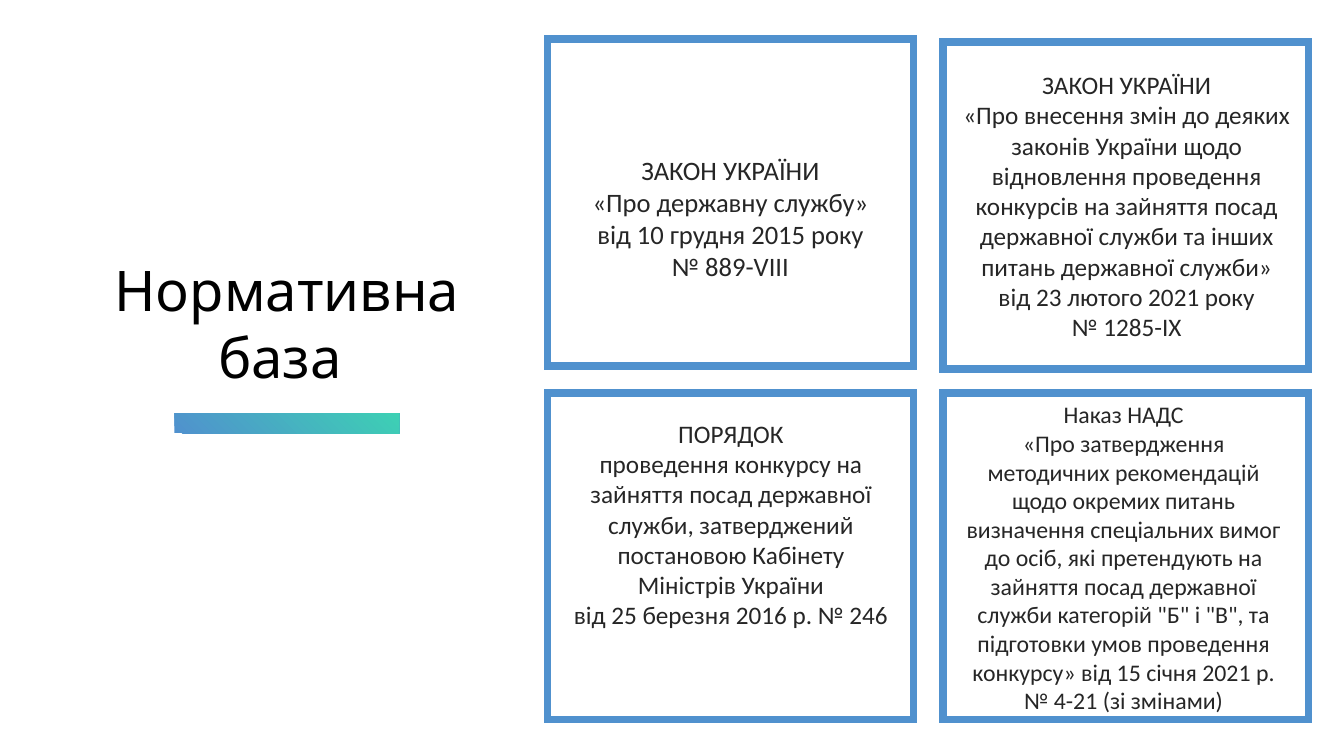
from lxml import etree
from pptx import Presentation
from pptx.dml.color import RGBColor
from pptx.enum.shapes import MSO_SHAPE as SHAPE
from pptx.enum.text import MSO_ANCHOR as ANCHOR, MSO_AUTO_SIZE as AUTOSIZE, PP_ALIGN as ALIGN
from pptx.oxml import parse_xml
from pptx.util import Inches, Pt

NS = "http://schemas.openxmlformats.org/drawingml/2006/main"
BLUE, GREEN, DARK = "5091CE", "3DD0B4", "262626"


def rgb(value):
    return RGBColor.from_string(value)


def write(tf, paragraphs, size, font, color):
    tf.word_wrap = True
    tf.auto_size = AUTOSIZE.NONE
    tf.vertical_anchor = ANCHOR.TOP
    for i, text in enumerate(paragraphs):
        p = tf.add_paragraph() if i else tf.paragraphs[0]
        p.alignment = ALIGN.CENTER
        r = p.add_run()
        r.text = text
        r.font.size = Pt(size)
        r.font.name = font
        r.font.color.rgb = rgb(color)


prs = Presentation()
prs.slide_width, prs.slide_height = Inches(13.33), Inches(7.5)
s = prs.slides.add_slide(prs.slide_layouts[5])

# Title
title = s.shapes.title
title.left, title.top = Inches(0.8), Inches(2.48)
title.width, title.height = Inches(4.09), Inches(1.45)
write(title.text_frame, ["Нормативна база "], 40, "League Spartan", "000000")

# Accent bar with a gradient spreading from the top right corner
bar = s.shapes.add_shape(SHAPE.RECTANGLE, Inches(1.73), Inches(4.1), Inches(2.23), Inches(0.2))
bar.shadow.inherit = False
bar.line.fill.background()
gradient = parse_xml(
    f'<a:gradFill xmlns:a="{NS}" rotWithShape="1"><a:gsLst>'
    f'<a:gs pos="0"><a:srgbClr val="{GREEN}"/></a:gs>'
    f'<a:gs pos="100000"><a:srgbClr val="{BLUE}"/></a:gs></a:gsLst>'
    '<a:path path="circle"><a:fillToRect l="100000" b="100000"/></a:path></a:gradFill>')
bar.element.spPr.find(f"{{{NS}}}prstGeom").addnext(gradient)

# Frames of the four documents
for left, top in [(5.43, 0.39), (9.35, 0.42), (5.43, 3.9), (9.35, 3.9)]:
    sp = s.shapes.add_shape(SHAPE.RECTANGLE, Inches(left), Inches(top), Inches(3.63), Inches(3.24))
    sp.shadow.inherit = False
    sp.fill.background()
    sp.line.color.rgb = rgb(BLUE)
    sp.line.width = Pt(5.5)
    miter = etree.SubElement(sp.element.spPr.find(f"{{{NS}}}ln"), f"{{{NS}}}miter")
    miter.set("lim", "800000")

# Document texts: left, top, width, height, size, paragraphs
documents = [
    (5.71, 1.48, 3.07, 1.38, 19, [
        "ЗАКОН УКРАЇНИ",
        "«Про державну службу» від 10 грудня 2015 року",
        "№ 889-VIII"]),
    (9.36, 0.64, 3.63, 2.83, 18, [
        "ЗАКОН УКРАЇНИ",
        "«Про внесення змін до деяких законів України щодо відновлення проведення "
        "конкурсів на зайняття посад державної служби та інших питань державної служби»",
        "від 23 лютого 2021 року",
        "№ 1285-IX"]),
    (5.57, 4.1, 3.36, 2.22, 18, [
        "ПОРЯДОК",
        "проведення конкурсу на зайняття посад державної служби, затверджений",
        "постановою Кабінету Міністрів України",
        "від 25 березня 2016 р. № 246"]),
    (9.46, 3.92, 3.37, 3.26, 17, [
        "Наказ НАДС",
        "«Про затвердження методичних рекомендацій щодо окремих питань визначення "
        "спеціальних вимог до осіб, які претендують на зайняття посад державної служби "
        'категорій "Б" і "В", та підготовки умов проведення конкурсу» '
        "від 15 січня 2021 р. № 4-21 (зі змінами)"]),
]
for left, top, width, height, size, paragraphs in documents:
    box = s.shapes.add_textbox(Inches(left), Inches(top), Inches(width), Inches(height))
    write(box.text_frame, paragraphs, size, "Calibri", DARK)

prs.save("out.pptx")
